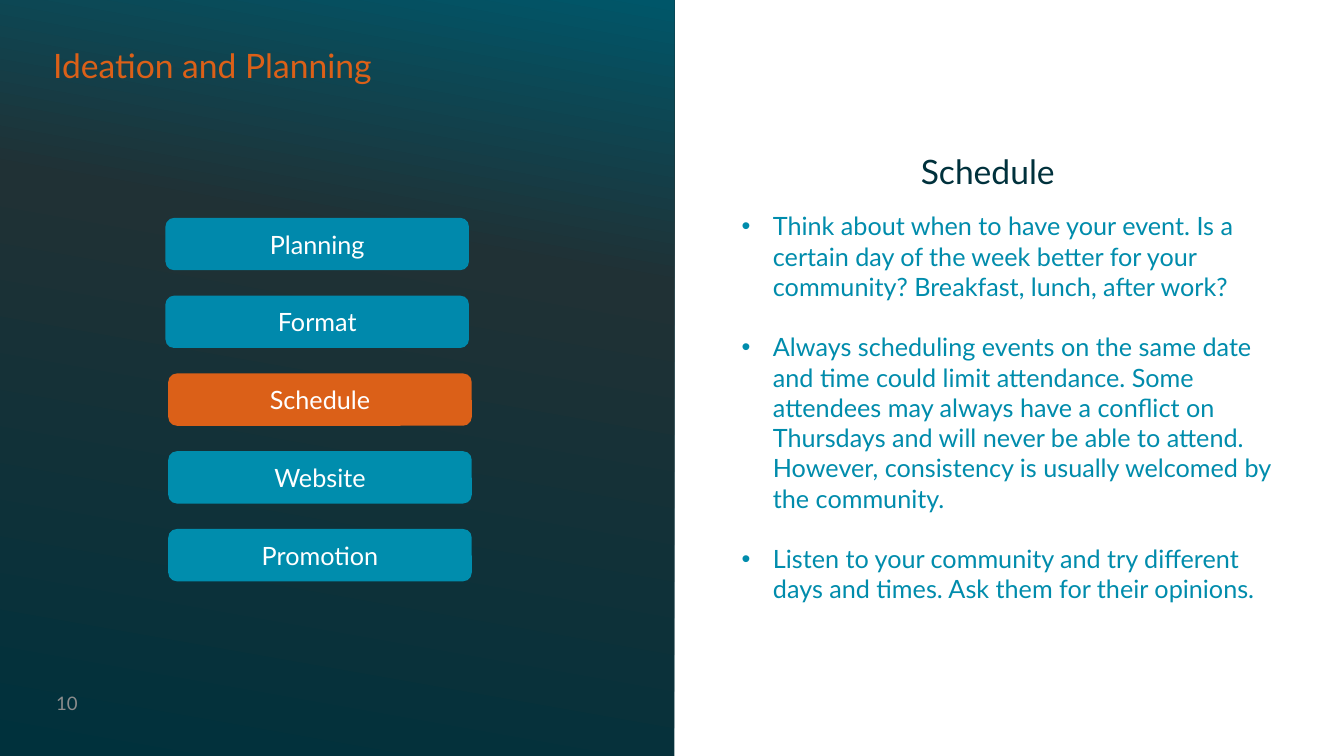
from copy import deepcopy
from dataclasses import dataclass

from lxml import etree
from pptx import Presentation
from pptx.dml.color import RGBColor
from pptx.enum import shapes, text
from pptx.oxml import ns
from pptx.util import Cm, Pt

NAVY = RGBColor(0x00, 0x31, 0x3C)
CHARCOAL = RGBColor(0x20, 0x31, 0x35)
PETROL = RGBColor(0x00, 0x56, 0x69)
ORANGE = RGBColor(0xDB, 0x60, 0x18)
BLUE = RGBColor(0x00, 0x89, 0xAC)
LIGHT_BLUE = RGBColor(0x00, 0x8D, 0xAD)
BODY_BLUE = RGBColor(0x00, 0x8C, 0xAC)
GREY = RGBColor(0x8C, 0x8C, 0x8C)
WHITE = RGBColor(0xFF, 0xFF, 0xFF)

GRADIENT = [(0, NAVY), (0.67, CHARCOAL), (1, PETROL)]
INSET_X, INSET_Y = 0.25, 0.13
STEP_TOP, STEP_PITCH = 5.49, 1.96
BULLET_INDENT = Cm(0.79)
LEFT, CENTER, RIGHT = text.PP_ALIGN.LEFT, text.PP_ALIGN.CENTER, text.PP_ALIGN.RIGHT
TOP, MIDDLE = text.MSO_ANCHOR.TOP, text.MSO_ANCHOR.MIDDLE

ADVICE = [
    "Think about when to have your event. Is a certain day of the week better for your "
    "community? Breakfast, lunch, after work?",
    "Always scheduling events on the same date and time could limit attendance. Some "
    "attendees may always have a conflict on Thursdays and will never be able to attend. "
    "However, consistency is usually welcomed by the community.",
    "Listen to your community and try different days and times. Ask them for their opinions.",
]


@dataclass(frozen=True)
class Step:
    label: str
    left: float
    color: RGBColor


@dataclass(frozen=True)
class Style:
    size: float
    color: RGBColor
    align: text.PP_ALIGN = LEFT
    anchor: text.MSO_ANCHOR = TOP
    inset_x: float = INSET_X
    inset_y: float = INSET_Y


STEPS = [
    Step("Planning", 4.17, BLUE),
    Step("Format", 4.17, BLUE),
    Step("Schedule", 4.24, ORANGE),
    Step("Website", 4.24, LIGHT_BLUE),
    Step("Promotion", 4.24, LIGHT_BLUE),
]
STEP_STYLE = Style(18, WHITE, CENTER, MIDDLE)


def set_attributes(target, values: dict) -> None:
    for name, value in values.items():
        setattr(target, name, value)


def write(shape, paragraphs: list[str], style: Style) -> None:
    frame = shape.text_frame
    frame.text = "\n".join(paragraphs)
    set_attributes(frame, {
        "word_wrap": True,
        "auto_size": text.MSO_AUTO_SIZE.NONE,
        "vertical_anchor": style.anchor,
        "margin_left": Cm(style.inset_x),
        "margin_right": Cm(style.inset_x),
        "margin_top": Cm(style.inset_y),
        "margin_bottom": Cm(style.inset_y),
    })
    for paragraph in frame.paragraphs:
        paragraph.alignment = style.align
        for run in paragraph.runs:
            set_attributes(run.font, {"name": "Lato", "size": Pt(style.size)})
            run.font.color.rgb = style.color


def add_text(slide, box: tuple, paragraphs: list[str], style: Style):
    shape = slide.shapes.add_textbox(*map(Cm, box))
    write(shape, paragraphs, style)
    return shape


def add_block(slide, kind: shapes.MSO_SHAPE, box: tuple):
    block = slide.shapes.add_shape(kind, *map(Cm, box))
    block.shadow.inherit = False
    block.line.fill.background()
    return block


def add_panel(slide) -> None:
    """Draw the gradient panel behind everything else."""
    panel = add_block(slide, shapes.MSO_SHAPE.RECTANGLE, (0, 0, 16.99, 19.05))
    panel.fill.gradient()
    panel.fill.gradient_angle = 80
    stop_list = panel._element.spPr.find(".//" + ns.qn("a:gsLst"))
    stop_list.append(deepcopy(stop_list[-1]))
    for stop, (position, color) in zip(panel.fill.gradient_stops, GRADIENT):
        stop.position = position
        stop.color.rgb = color
    slide.shapes._spTree.insert(2, panel._element)


def add_step(slide, index: int, step: Step) -> None:
    top = STEP_TOP + index * STEP_PITCH
    button = add_block(slide, shapes.MSO_SHAPE.ROUNDED_RECTANGLE, (step.left, top, 7.65, 1.32))
    button.fill.solid()
    button.fill.fore_color.rgb = step.color
    write(button, [step.label], STEP_STYLE)


def add_bullet(paragraph) -> None:
    properties = paragraph._p.get_or_add_pPr()
    properties.set("marL", str(BULLET_INDENT))
    properties.set("indent", str(-BULLET_INDENT))
    color = etree.SubElement(properties, ns.qn("a:buClr"))
    etree.SubElement(color, ns.qn("a:srgbClr"), val=str(BODY_BLUE))
    etree.SubElement(properties, ns.qn("a:buFont"), typeface="Arial")
    etree.SubElement(properties, ns.qn("a:buChar"), char="•")


def add_advice(slide) -> None:
    advice = add_text(slide, (18.44, 5.18, 13.94, 11.02), ADVICE, Style(18, BODY_BLUE))
    for index, paragraph in enumerate(advice.text_frame.paragraphs):
        add_bullet(paragraph)
        if index:
            paragraph.space_before = Pt(21.6)


def main() -> None:
    deck = Presentation()
    set_attributes(deck, {"slide_width": Cm(33.87), "slide_height": Cm(19.05)})
    slide = deck.slides.add_slide(deck.slide_layouts[5])

    add_panel(slide)
    title = slide.shapes.title
    set_attributes(title, {
        "left": Cm(1.09), "top": Cm(0.99), "width": Cm(10.16), "height": Cm(1.27),
    })
    write(title, ["Ideation and Planning"], Style(24, ORANGE))

    for index, step in enumerate(STEPS):
        add_step(slide, index, step)

    subhead = add_text(slide, (22.05, 3.91, 5.69, 2.01), ["Schedule"],
                       Style(24, NAVY, CENTER, inset_x=0, inset_y=0))
    subhead.text_frame.paragraphs[0].line_spacing = 0.9
    add_advice(slide)
    add_text(slide, (0, 17.35, 2.21, 0.71), ["10"],
             Style(13.3, GREY, RIGHT, MIDDLE, inset_y=INSET_X))

    deck.save("out.pptx")


if __name__ == "__main__":
    main()
